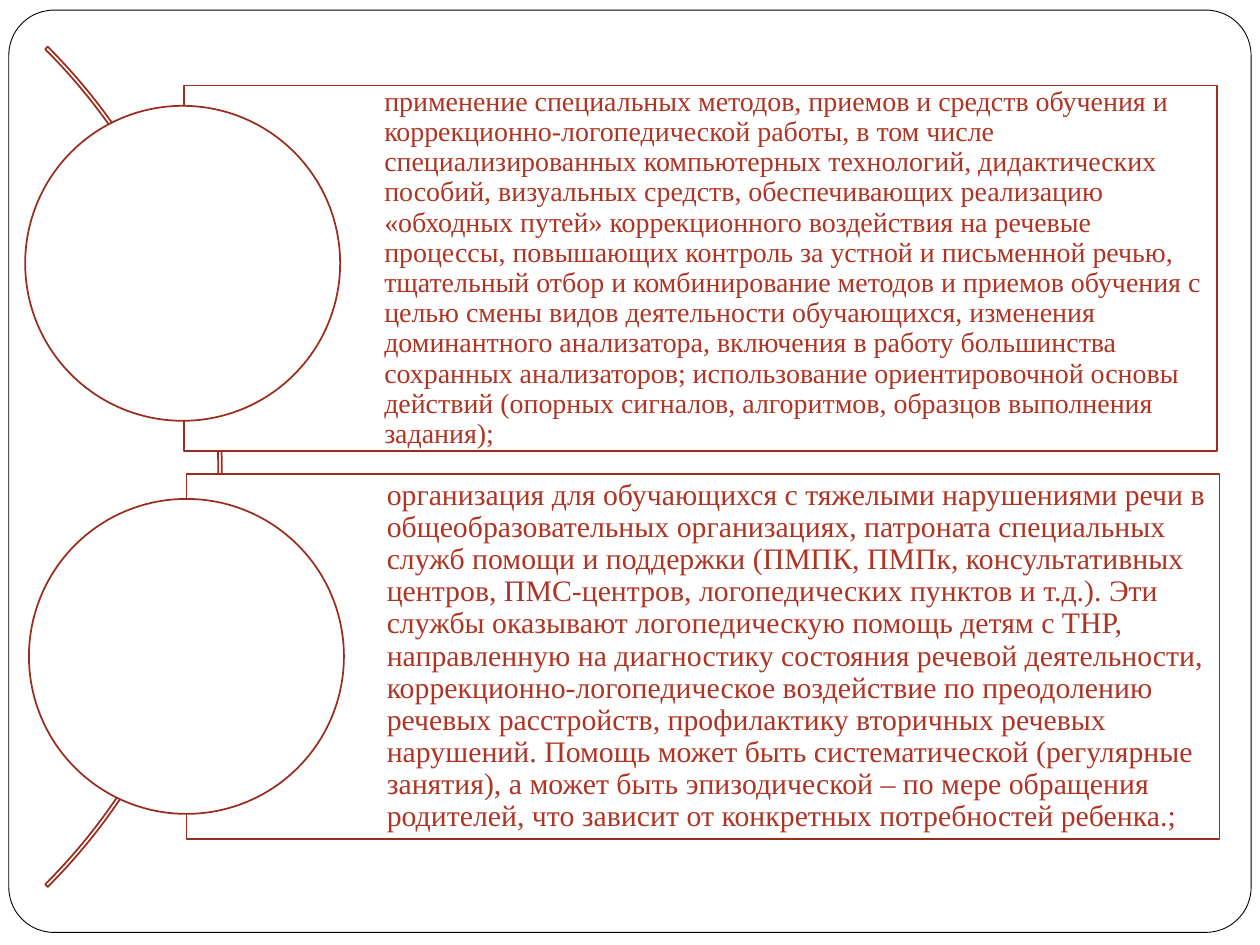
from pptx import Presentation
from pptx.dml.color import RGBColor
from pptx.enum.shapes import MSO_SHAPE
from pptx.enum.text import MSO_ANCHOR, PP_ALIGN
from pptx.util import Inches, Pt

RECT, OVAL = MSO_SHAPE.RECTANGLE, MSO_SHAPE.OVAL
ROUND, ARC = MSO_SHAPE.ROUNDED_RECTANGLE, MSO_SHAPE.BLOCK_ARC
LEFT, MIDDLE = PP_ALIGN.LEFT, MSO_ANCHOR.MIDDLE


class Theme:
    paper = RGBColor.from_string("FFFFFF")
    frame = RGBColor.from_string("000000")
    edge = RGBColor.from_string("9B2D1F")
    ink = RGBColor.from_string("AF3423")
    font = "Times New Roman"
    small, large = 16, 17
    thin, line = 0.5, 1


def draw(kind, left, top, width, height, color=Theme.edge, weight=Theme.line):
    """Add a white shape with a coloured outline; lengths are inches."""
    shape = slide.shapes.add_shape(
        kind, Inches(left), Inches(top), Inches(width), Inches(height))
    shape.shadow.inherit = False
    shape.fill.solid()
    shape.fill.fore_color.rgb = Theme.paper
    shape.line.color.rgb = color
    shape.line.width = Pt(weight)
    return shape


def write(shape, text, size, indent, pad):
    frame = shape.text_frame
    frame.word_wrap = True
    frame.vertical_anchor = MIDDLE
    frame.margin_left = Inches(indent)
    frame.margin_top = frame.margin_right = frame.margin_bottom = Inches(pad)
    para = frame.paragraphs[0]
    para.alignment = LEFT
    para.line_spacing = 0.9
    run = para.add_run()
    run.text = text
    run.font.name = Theme.font
    run.font.size = Pt(size)
    run.font.color.rgb = Theme.ink


deck = Presentation()
deck.slide_width, deck.slide_height = Inches(10), Inches(7.5)
slide = deck.slides.add_slide(deck.slide_layouts[6])

border = draw(ROUND, 0.07, 0.08, 9.86, 7.32, Theme.frame, Theme.thin)
border.adjustments[0] = 0.049

# Arc angles are in units of 100000/60000 degree: 315 to 45 degrees
arc = draw(ARC, -7.67, -1.01, 9.43, 9.43)
for i, value in enumerate((315 * 0.6, 45 * 0.6, 0.003)):
    arc.adjustments[i] = value

# Box left and top, circle left and top, type size, padding, text
items = [
    (1.46, 0.68, 0.2, 0.84, Theme.small, 0.04,
     "применение специальных методов, приемов и средств обучения и "
     "коррекционно-логопедической работы, в том числе специализированных "
     "компьютерных технологий, дидактических пособий, визуальных средств, "
     "обеспечивающих реализацию «обходных путей» коррекционного воздействия "
     "на речевые процессы, повышающих контроль за устной и письменной речью, "
     "тщательный отбор и комбинирование методов и приемов обучения с целью "
     "смены видов деятельности обучающихся, изменения доминантного "
     "анализатора, включения в работу большинства сохранных анализаторов; "
     "использование ориентировочной основы действий (опорных сигналов, "
     "алгоритмов, образцов выполнения задания);"),
    (1.48, 3.76, 0.23, 3.96, Theme.large, 0.05,
     "организация для обучающихся с тяжелыми нарушениями речи в "
     "общеобразовательных организациях, патроната специальных служб помощи "
     "и поддержки (ПМПК, ПМПк, консультативных центров, ПМС-центров, "
     "логопедических пунктов и т.д.). Эти службы оказывают логопедическую "
     "помощь детям с ТНР, направленную на диагностику состояния речевой "
     "деятельности, коррекционно-логопедическое воздействие по преодолению "
     "речевых расстройств, профилактику вторичных речевых нарушений. Помощь "
     "может быть систематической (регулярные занятия), а может быть "
     "эпизодической – по мере обращения родителей, что зависит от "
     "конкретных потребностей ребенка.;"),
]
for left, top, x, y, size, pad, text in items:
    box = draw(RECT, left, top, 8.2, 2.9)
    write(box, text, size=size, indent=1.59, pad=pad)
    draw(OVAL, x, y, 2.5, 2.5)

deck.save("out.pptx")
